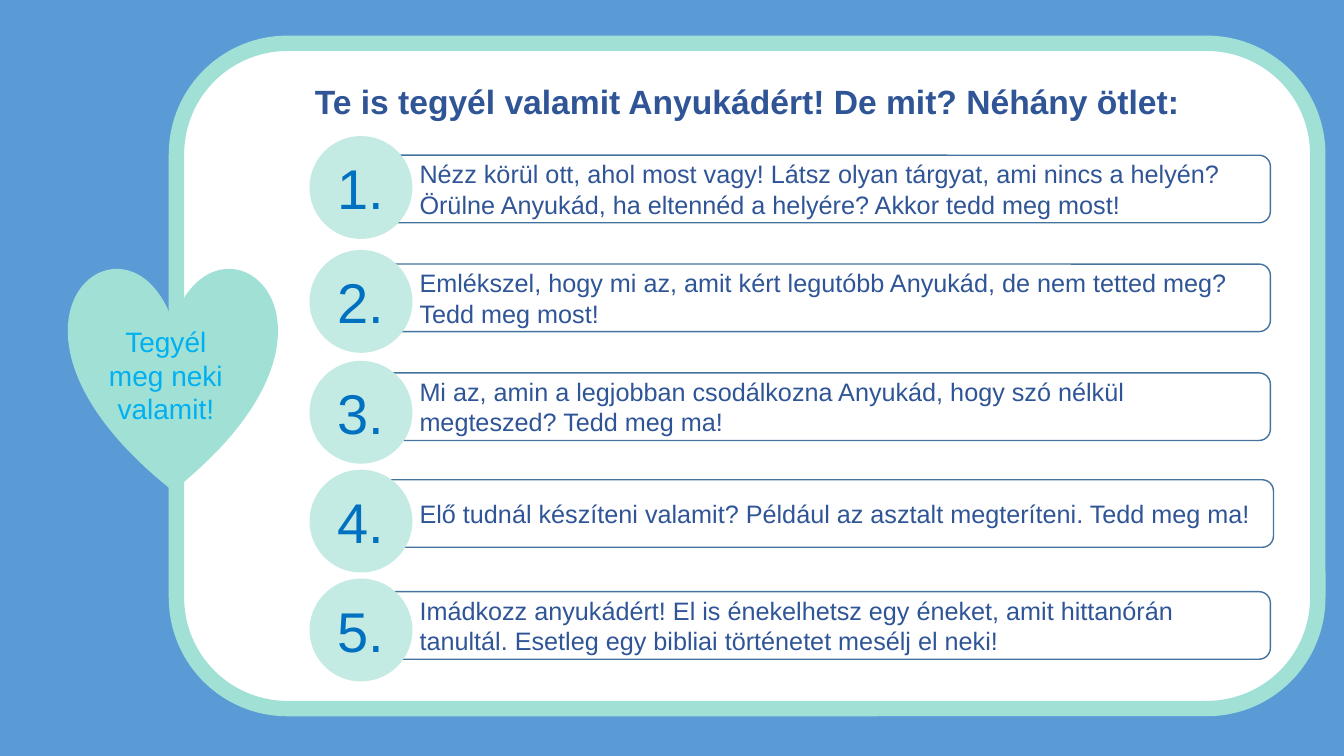
from pptx import Presentation
from pptx.dml.color import RGBColor
from pptx.enum.shapes import MSO_SHAPE as Shape
from pptx.enum.text import MSO_ANCHOR as Anchor, PP_ALIGN as Align
from pptx.util import Inches, Pt

TITLE = "Te is tegyél valamit Anyukádért! De mit? Néhány ötlet:"
CALL = "Tegyél meg neki valamit!"
# text, top of bar, top of disc, width of bar
IDEAS = [
    ("Nézz körül ott, ahol most vagy! Látsz olyan tárgyat, ami nincs a helyén? "
     "Örülne Anyukád, ha eltennéd a helyére? Akkor tedd meg most!", 1.54, 1.35, 9.06),
    ("Emlékszel, hogy mi az, amit kért legutóbb Anyukád, de nem tetted meg? "
     "Tedd meg most!", 2.62, 2.48, 9.06),
    ("Mi az, amin a legjobban csodálkozna Anyukád, hogy szó nélkül megteszed? "
     "Tedd meg ma!", 3.7, 3.58, 9.06),
    ("Elő tudnál készíteni valamit? Például az asztalt megteríteni. "
     "Tedd meg ma!", 4.76, 4.66, 9.09),
    ("Imádkozz anyukádért! El is énekelhetsz egy éneket, amit hittanórán tanultál. "
     "Esetleg egy bibliai történetet mesélj el neki!", 5.87, 5.74, 9.06),
]
BLUE, MINT, PALE, WHITE = "5B9BD5", "A1E0D5", "C3EBE4", "FFFFFF"
NAVY, EDGE, DIGIT, SKY = "2F5597", "43739E", "0070C0", "00B0F0"
BAR_X, BAR_H = 3.54, 0.67
DISC_X, DISC = 3.07, 1.02


def color(code):
    return RGBColor.from_string(code)


def draw(home, kind, box, fill, line=None, width=1):
    shape = home.shapes.add_shape(kind, *map(Inches, box))
    shape.shadow.inherit = False
    shape.fill.solid()
    shape.fill.fore_color.rgb = color(fill)
    if line:
        shape.line.color.rgb = color(line)
        shape.line.width = Pt(width)
    else:
        shape.line.fill.background()
    return shape


def write(shape, text, size, ink, bold=False, align=Align.CENTER,
          anchor=Anchor.MIDDLE, indent=0):
    frame = shape.text_frame
    frame.word_wrap = True
    frame.vertical_anchor = anchor
    para = frame.paragraphs[0]
    para.alignment = align
    if indent:
        para._p.get_or_add_pPr().set("marL", str(Inches(indent)))
    run = para.add_run()
    run.text = text
    run.font.name = "Arial"
    run.font.size = Pt(size)
    run.font.bold = bold
    run.font.color.rgb = color(ink)


deck = Presentation()
deck.slide_width, deck.slide_height = Inches(13.33), Inches(7.5)
slide = deck.slides.add_slide(deck.slide_layouts[6])
slide.background.fill.solid()
slide.background.fill.fore_color.rgb = color(BLUE)

panel = draw(slide, Shape.ROUNDED_RECTANGLE, (1.75, 0.43, 11.32, 6.6), WHITE, MINT, 11)
write(panel, TITLE, 24, NAVY, bold=True, anchor=Anchor.TOP)

badge = slide.shapes.add_group_shape()
draw(badge, Shape.HEART, (0.68, 2.64, 2.07, 2.23), MINT)
label = badge.shapes.add_textbox(*map(Inches, (0.85, 3.17, 1.59, 1.11)))
write(label, CALL, 20, SKY, anchor=Anchor.TOP)

for num, (idea, bar_y, disc_y, bar_w) in enumerate(IDEAS, 1):
    row = slide.shapes.add_group_shape()
    bar = draw(row, Shape.ROUNDED_RECTANGLE, (BAR_X, bar_y, bar_w, BAR_H), WHITE, EDGE)
    write(bar, idea, 18, NAVY, align=Align.LEFT, indent=0.49)
    disc = draw(row, Shape.OVAL, (DISC_X, disc_y, DISC, DISC), PALE)
    write(disc, f"{num}.", 40, DIGIT)

deck.save("out.pptx")
